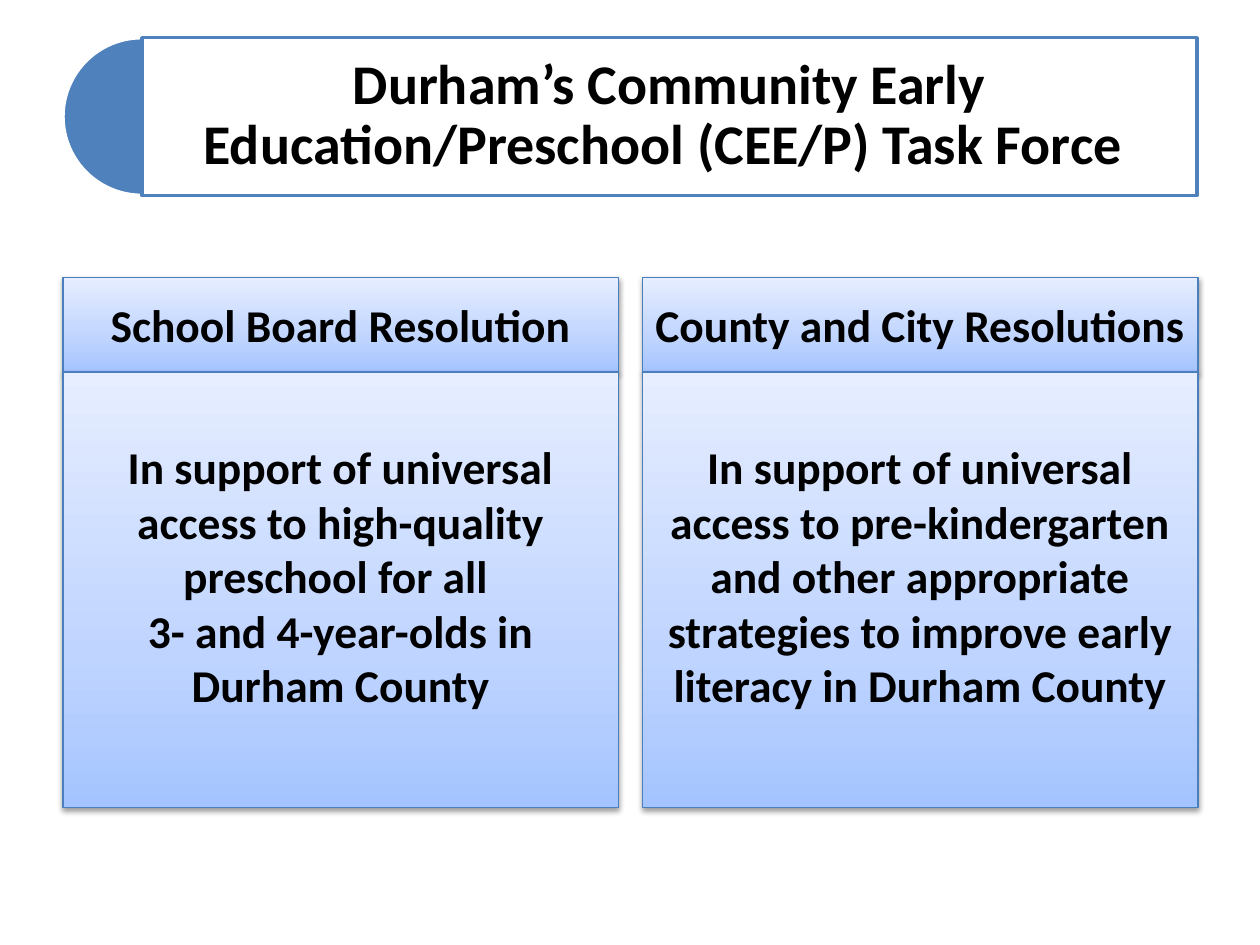
from lxml.etree import SubElement
from pptx import Presentation
from pptx.dml.color import RGBColor
from pptx.enum.shapes import MSO_SHAPE
from pptx.enum.text import MSO_ANCHOR, PP_ALIGN
from pptx.oxml import parse_xml
from pptx.oxml.ns import nsdecls, qn
from pptx.util import Cm, Pt

BLUE = RGBColor(0x4F, 0x81, 0xBD)
EDGE = RGBColor(0x4B, 0x7E, 0xBC)
WHITE = RGBColor(0xFF, 0xFF, 0xFF)
BLACK = RGBColor(0x00, 0x00, 0x00)
PANEL_STOPS = [
    (0, RGBColor(0xA4, 0xC4, 0xFF)),
    (35, RGBColor(0xBF, 0xD4, 0xFF)),
    (100, RGBColor(0xE6, 0xEE, 0xFF)),
]

prs = Presentation()
prs.slide_width, prs.slide_height = Cm(25.4), Cm(19.05)
slide = prs.slides.add_slide(prs.slide_layouts[6])


def add_block(preset, left, top, width, height, edge, weight):
    block = slide.shapes.add_shape(preset, Cm(left), Cm(top), Cm(width), Cm(height))
    block.shadow.inherit = False
    block.line.color.rgb = edge
    block.line.width = Pt(weight)
    return block


def write(block, text, size, anchor):
    frame = block.text_frame
    frame.word_wrap = True
    frame.vertical_anchor = anchor
    frame.text = text
    paragraph = frame.paragraphs[0]
    paragraph.alignment = PP_ALIGN.CENTER
    for run in paragraph.runs:
        run.font.name = "Calibri"
        run.font.size = Pt(size)
        run.font.bold = True
        run.font.color.rgb = BLACK


# Title banner with a half disc on its left
half_disc = add_block(MSO_SHAPE.PIE, 1.27, 0.76, 3.18, 3.18, WHITE, 2)
half_disc.adjustments[0] = 54
half_disc.adjustments[1] = 162
half_disc.fill.solid()
half_disc.fill.fore_color.rgb = BLUE

banner = add_block(MSO_SHAPE.RECTANGLE, 2.86, 0.76, 21.27, 3.18, BLUE, 2)
banner.fill.solid()
banner.fill.fore_color.rgb = WHITE
banner_color = banner.fill._xPr.find(qn("a:solidFill"))[0]
SubElement(banner_color, qn("a:alpha"), val="90000")
write(banner, "Durham’s Community Early Education/Preschool (CEE/P) Task Force ",
      32, MSO_ANCHOR.MIDDLE)
banner.text_frame.paragraphs[0].line_spacing = 0.9
banner.text_frame.margin_left = banner.text_frame.margin_right = Cm(0.33)

# Two resolutions, each a heading above a body
resolutions = [
    (1.27, "School Board Resolution",
     "In support of universal access to high-quality preschool for all \v"
     "3- and 4-year-olds in Durham County"),
    (12.95, "County and City Resolutions",
     "In support of universal access to pre-kindergarten and other appropriate "
     "strategies to improve early literacy in Durham County"),
]
stops = "".join(
    f'<a:gs pos="{position * 1000}"><a:srgbClr val="{color}"/></a:gs>'
    for position, color in PANEL_STOPS
)

for left, heading, body in resolutions:
    for top, height, text, anchor in [
        (5.59, 1.91, heading, MSO_ANCHOR.MIDDLE),
        (7.5, 8.78, body, MSO_ANCHOR.TOP),
    ]:
        panel = add_block(MSO_SHAPE.RECTANGLE, left, top, 11.2, height, EDGE, 0.75)
        write(panel, text, 26, anchor)
        if text == body:
            panel.text_frame.margin_top = Cm(1.35)

        # Gradient running upwards, and a soft shadow below
        properties = panel._element.spPr
        properties.find(qn("a:prstGeom")).addnext(parse_xml(
            f'<a:gradFill {nsdecls("a")} rotWithShape="1"><a:gsLst>{stops}</a:gsLst>'
            '<a:lin ang="16200000" scaled="0"/></a:gradFill>'))
        properties.find(qn("a:effectLst")).append(parse_xml(
            f'<a:outerShdw {nsdecls("a")} blurRad="40000" dist="20000" dir="5400000" '
            f'rotWithShape="0"><a:srgbClr val="{BLACK}"><a:alpha val="38000"/>'
            '</a:srgbClr></a:outerShdw>'))

prs.save("out.pptx")
